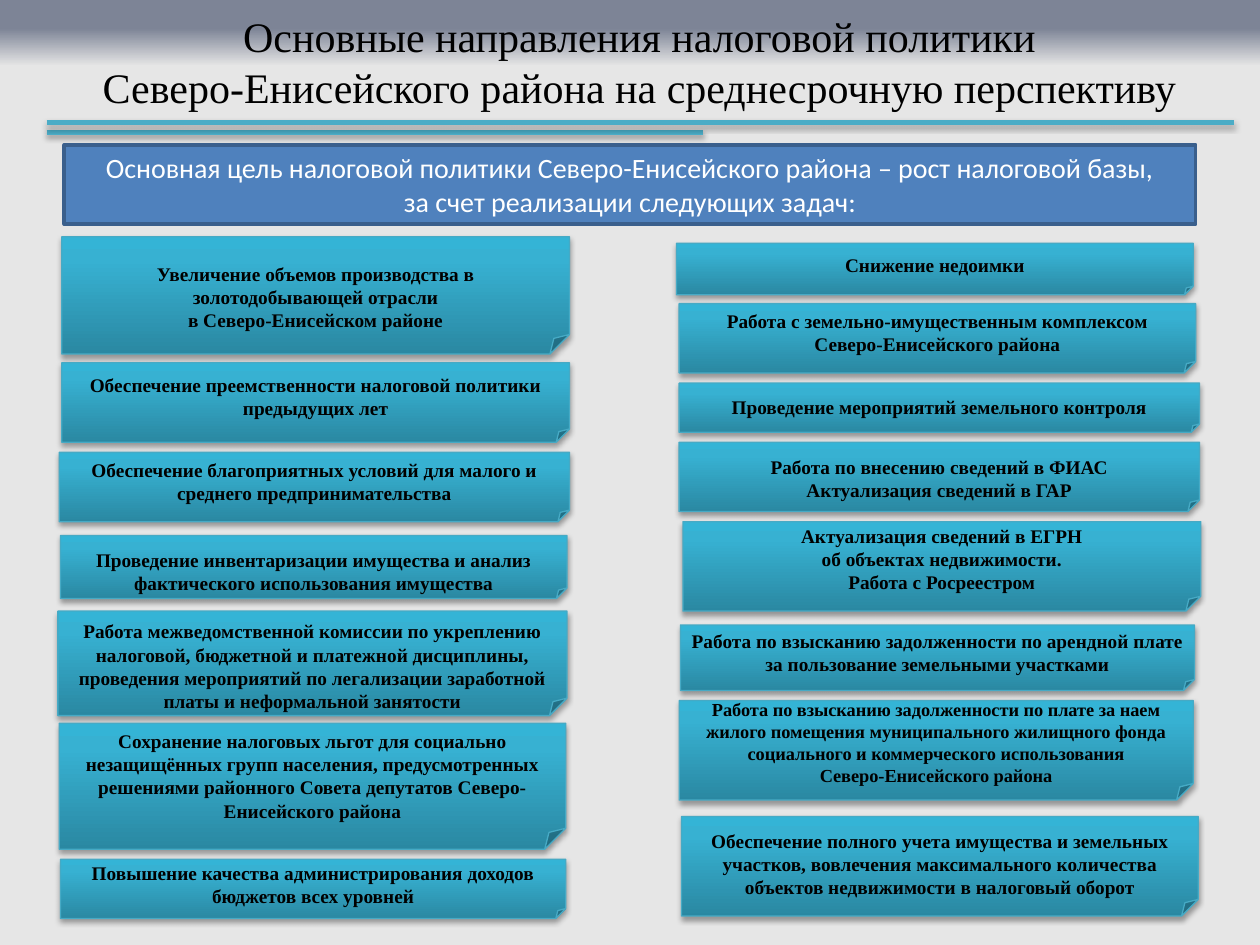
from lxml import etree
from pptx import Presentation
from pptx import util as u
from pptx.dml.color import RGBColor
from pptx.enum import shapes, text
from pptx.oxml.ns import qn

BLACK = RGBColor(0x00, 0x00, 0x00)
WHITE = RGBColor(0xFF, 0xFF, 0xFF)
SLATE = RGBColor(0x7D, 0x84, 0x96)
PALE = RGBColor(0xE6, 0xE6, 0xE6)
RULE = RGBColor(0x4B, 0xAC, 0xC6)
BLUE = RGBColor(0x4F, 0x81, 0xBD)
NAVY = RGBColor(0x3A, 0x5F, 0x8C)
NOTE_EDGE = RGBColor(0x46, 0xAA, 0xC5)
TEAL_DARK = RGBColor(0x2A, 0x88, 0xA2)
TEAL = RGBColor(0x37, 0xB1, 0xD2)
TEAL_LIGHT = RGBColor(0x34, 0xB4, 0xD6)

BACKDROP_STOPS = [(0, SLATE), (3, SLATE), (7, PALE), (100, PALE)]
NOTE_STOPS = [(0, TEAL_DARK), (80, TEAL), (100, TEAL_LIGHT)]

TITLE_FONT = {"name": "Times New Roman", "size": u.Pt(24)}
GOAL_FONT = {"name": "Calibri", "size": u.Pt(16)}
NOTE_FONT = {"name": "Times New Roman", "size": u.Pt(11), "bold": True}
SMALL_NOTE_FONT = {**NOTE_FONT, "size": u.Pt(10.5)}
MIDDLE = {"word_wrap": True, "vertical_anchor": text.MSO_ANCHOR.MIDDLE}
NOTE_FRAME = {**MIDDLE, "margin_left": u.Inches(0.02), "margin_right": u.Inches(0.02),
              "margin_top": u.Inches(0.1), "margin_bottom": u.Inches(0.1)}
TOP_FRAME = {**NOTE_FRAME, "vertical_anchor": text.MSO_ANCHOR.TOP}
LOWERED_FRAME = {**NOTE_FRAME, "margin_top": u.Inches(0.28)}
FIRST_FRAME = {**MIDDLE, "margin_top": u.Inches(0.23)}

TITLE = ("Основные направления налоговой политики\n"
         "Северо-Енисейского района на среднесрочную перспективу")
GOAL = ("Основная цель налоговой политики Северо-Енисейского района – рост налоговой базы,\n"
        "за счет реализации следующих задач:")

LEFT_TASKS = [
    (0.03, 0, 4.03, 0.93, FIRST_FRAME, NOTE_FONT,
     "Увеличение объемов производства в золотодобывающей отрасли\n"
     "в Северо-Енисейском районе"),
    (0.03, 1, 4.03, 0.63, NOTE_FRAME, NOTE_FONT,
     "Обеспечение преемственности налоговой политики предыдущих лет"),
    (0.01, 1.71, 4.05, 0.55, NOTE_FRAME, NOTE_FONT,
     "Обеспечение благоприятных условий для малого и среднего предпринимательства"),
    (0.02, 2.37, 4.02, 0.5, TOP_FRAME, NOTE_FONT,
     "Проведение инвентаризации имущества и анализ фактического использования имущества"),
    (0, 2.97, 4.04, 0.83, LOWERED_FRAME, NOTE_FONT,
     "Работа межведомственной комиссии по укреплению налоговой, бюджетной и платежной "
     "дисциплины, проведения мероприятий по легализации заработной платы и "
     "неформальной занятости"),
    (0.01, 3.86, 4.02, 1, NOTE_FRAME, NOTE_FONT,
     "Сохранение налоговых льгот для социально незащищённых групп населения, "
     "предусмотренных решениями районного Совета депутатов Северо-Енисейского района"),
    (0.02, 4.94, 4.01, 0.47, NOTE_FRAME, NOTE_FONT,
     "Повышение качества администрирования доходов бюджетов всех уровней"),
]
RIGHT_TASKS = [
    (0, 0, 4.1, 0.41, NOTE_FRAME, NOTE_FONT, "Снижение недоимки"),
    (0.02, 0.48, 4.1, 0.55, NOTE_FRAME, NOTE_FONT,
     "Работа с земельно-имущественным комплексом\nСеверо-Енисейского района"),
    (0.02, 1.11, 4.13, 0.39, TOP_FRAME, NOTE_FONT,
     "Проведение мероприятий земельного контроля"),
    (0.02, 1.58, 4.13, 0.55, TOP_FRAME, NOTE_FONT,
     "Работа по внесению сведений в ФИАС\nАктуализация сведений в ГАР"),
    (0.05, 2.21, 4.11, 0.71, NOTE_FRAME, NOTE_FONT,
     "Актуализация сведений в ЕГРН\nоб объектах недвижимости.\nРабота с Росреестром"),
    (0.03, 3.03, 4.08, 0.52, NOTE_FRAME, NOTE_FONT,
     "Работа по взысканию задолженности по арендной плате "
     "за пользование земельными участками"),
    (0.02, 3.63, 4.08, 0.79, NOTE_FRAME, SMALL_NOTE_FONT,
     "Работа по взысканию задолженности по плате за наем жилого помещения муниципального "
     "жилищного фонда социального и коммерческого использования\n"
     "Северо-Енисейского района"),
    (0.04, 4.55, 4.1, 0.79, TOP_FRAME, NOTE_FONT,
     "Обеспечение полного учета имущества и земельных участков, вовлечения максимального "
     "количества объектов недвижимости в налоговый оборот"),
]


def apply(target, values):
    """Set each named attribute of the target."""
    for name, value in values.items():
        setattr(target, name, value)


def write(shape, wording, frame_values, font_values, color):
    """Fill a shape with centred paragraphs in one format."""
    frame = shape.text_frame
    apply(frame, frame_values)
    frame.text = wording
    for paragraph in frame.paragraphs:
        paragraph.alignment = text.PP_ALIGN.CENTER
        for run in paragraph.runs:
            apply(run.font, font_values)
            run.font.color.rgb = color


def paint_gradient(owner, fill, stops, angle):
    """Give the owner's fill a linear gradient with the given stops."""
    fill.gradient()
    fill.gradient_angle = angle
    stop_list = owner.element.find(".//" + qn("a:gsLst"))
    stop_list.clear()
    for percent, color in stops:
        stop = etree.SubElement(stop_list, qn("a:gs"), pos=str(percent * 1000))
        etree.SubElement(stop, qn("a:srgbClr"), val=str(color))


def cast_shadow(shape):
    """Add a soft shadow below a shape or line."""
    effects = etree.SubElement(shape.element.spPr, qn("a:effectLst"))
    shadow = etree.SubElement(effects, qn("a:outerShdw"), blurRad=str(u.Pt(3.1)),
                              dist=str(u.Pt(1.8)), dir="5400000", rotWithShape="0")
    color = etree.SubElement(shadow, qn("a:srgbClr"), val=str(BLACK))
    etree.SubElement(color, qn("a:alpha"), val="35000")


def add_title(slide, left, top, width, height):
    """Place the two-line heading."""
    heading = slide.shapes.add_textbox(*map(u.Inches, (left, top, width, height)))
    write(heading, TITLE, MIDDLE, TITLE_FONT, BLACK)


def add_rules(slide, left, top, width):
    """Place the long rule and the short one below it."""
    group = slide.shapes.add_group_shape()
    for length, drop in ((5.21, 0.08), (width, 0)):
        y = u.Inches(top + drop)
        rule = group.shapes.add_connector(shapes.MSO_CONNECTOR.STRAIGHT, u.Inches(left), y,
                                          u.Inches(left + length), y)
        rule.line.color.rgb = RULE
        rule.line.width = u.Pt(3)
        cast_shadow(rule)


def add_goal(slide, left, top, width, height):
    """Place the banner with the main goal."""
    banner = slide.shapes.add_shape(shapes.MSO_SHAPE.RECTANGLE,
                                    *map(u.Inches, (left, top, width, height)))
    banner.shadow.inherit = False
    banner.fill.solid()
    banner.fill.fore_color.rgb = BLUE
    banner.line.color.rgb = NAVY
    banner.line.width = u.Pt(2)
    write(banner, GOAL, MIDDLE, GOAL_FONT, WHITE)


def add_tasks(slide, left, top, tasks):
    """Place a column of folded notes from its top left corner."""
    for dx, dy, width, height, frame_values, font_values, wording in tasks:
        note = slide.shapes.add_shape(shapes.MSO_SHAPE.FOLDED_CORNER,
                                      *map(u.Inches, (left + dx, top + dy, width, height)))
        paint_gradient(note, note.fill, NOTE_STOPS, 90)
        note.line.color.rgb = NOTE_EDGE
        note.line.width = u.Pt(0.75)
        cast_shadow(note)
        write(note, wording, frame_values, font_values, BLACK)


def main():
    """Build the slide and save it."""
    deck = Presentation()
    deck.slide_width, deck.slide_height = u.Inches(10), u.Inches(7.5)
    slide = deck.slides.add_slide(deck.slide_layouts[6])
    paint_gradient(slide, slide.background.fill, BACKDROP_STOPS, 270)
    add_title(slide, 0.27, 0.13, 9.61, 0.71)
    add_rules(slide, 0.37, 0.97, 9.42)
    add_goal(slide, 0.51, 1.15, 8.98, 0.63)
    add_tasks(slide, 0.46, 1.88, LEFT_TASKS)
    add_tasks(slide, 5.37, 1.93, RIGHT_TASKS)
    deck.save("out.pptx")


if __name__ == "__main__":
    main()
